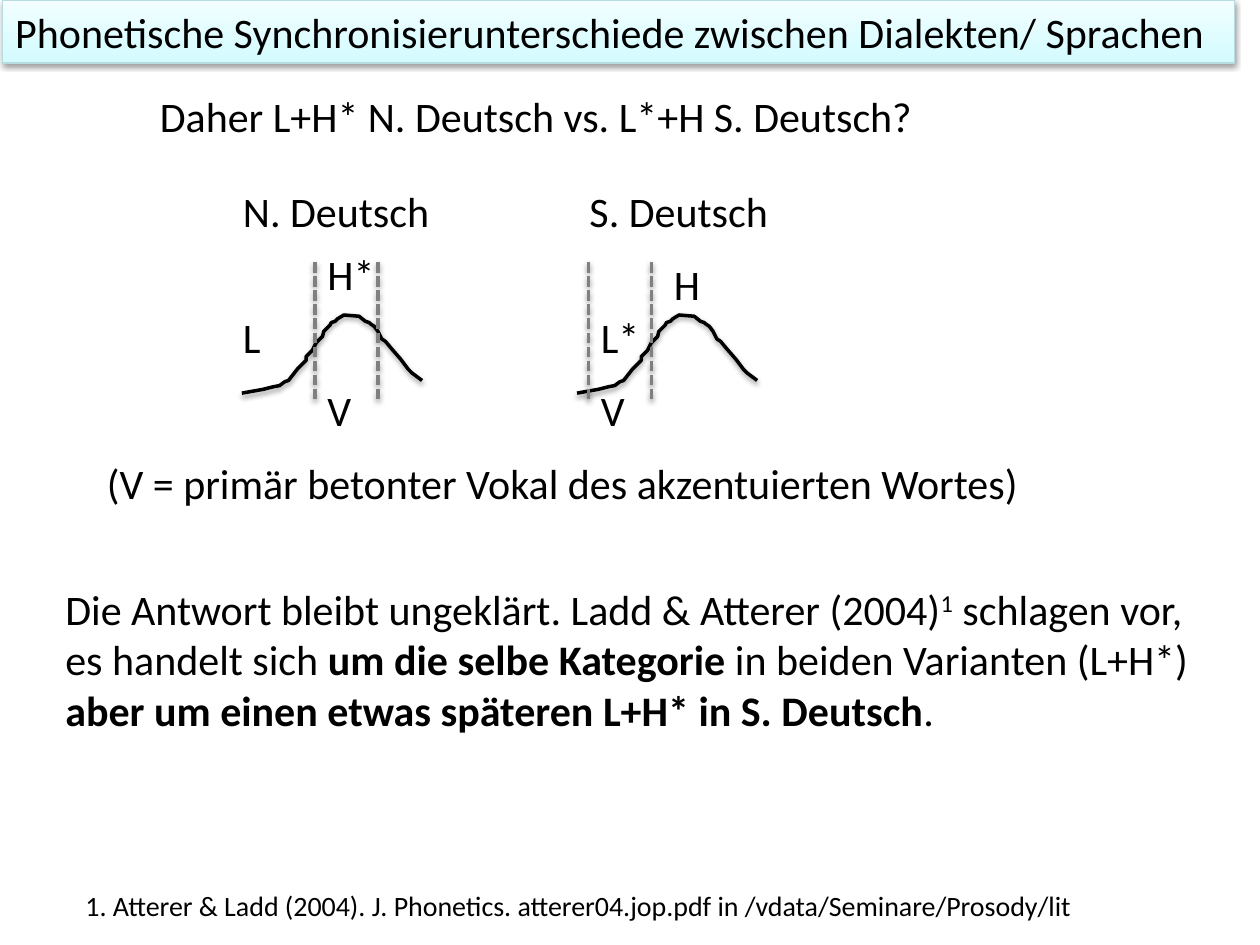
from dataclasses import dataclass

from lxml.etree import SubElement
from pptx import Presentation
from pptx.dml.color import RGBColor
from pptx.enum.dml import MSO_LINE_DASH_STYLE as Dash
from pptx.enum.shapes import MSO_CONNECTOR_TYPE as Connector
from pptx.enum.text import MSO_ANCHOR as Anchor
from pptx.enum.text import MSO_AUTO_SIZE as AutoSize
from pptx.enum.text import PP_ALIGN as Align
from pptx.oxml.ns import qn
from pptx.util import Inches, Pt

COLORS = {
    "text": "000000",
    "curve": "000000",
    "boundary": "808080",
    "banner_bottom": "D3FBFF",
    "banner_top": "F2FEFF",
    "banner_line": "B6DCDF",
    "shadow": "000000",
}
FONT = "Calibri"
SHADOW = {"blurRad": Pt(3.1), "dist": Pt(1.6), "dir": 90 * 60000, "rotWithShape": 0}
SHADOW_ALPHA = 38000

CURVE_TOP = 2.5
CURVE_POINTS = [
    (0, 62), (17, 59), (25, 57), (30, 56), (34, 53), (37, 52), (44, 43),
    (51, 36), (51, 33), (56, 28), (59, 22), (62, 19), (64, 17), (65, 13),
    (70, 8), (71, 6), (74, 5), (76, 3), (81, 0), (93, 1), (98, 5), (101, 6),
    (102, 7), (105, 9), (108, 13), (111, 19), (114, 21), (119, 27),
    (126, 35), (132, 43), (135, 46), (139, 49), (143, 52),
]
BOUNDARY_TOP = 2.08
BOUNDARY_BOTTOM = 3.17
VOWEL_WIDTH = 0.5


@dataclass(frozen=True)
class Run:
    text: str
    bold: bool = False
    superscript: bool = False


@dataclass(frozen=True)
class Label:
    left: float
    top: float
    width: float
    runs: tuple[Run, ...]
    size: int = 24
    height: float = 0.51


@dataclass(frozen=True)
class Contour:
    curve_left: float
    vowel_left: float


CONTOURS = [Contour(1.92, 2.5), Contour(4.58, 4.67)]

ANSWER = (
    Run("Die Antwort bleibt ungeklärt. Ladd & Atterer (2004)"),
    Run("1", superscript=True),
    Run(" schlagen vor, es handelt sich "),
    Run("um die selbe Kategorie ", bold=True),
    Run("in beiden Varianten (L+H*) "),
    Run("aber um einen etwas späteren L+H* in S. Deutsch", bold=True),
    Run("."),
)
CITATION = "1. Atterer & Ladd (2004). J. Phonetics. atterer04.jop.pdf in /vdata/Seminare/Prosody/lit"

LABELS = [
    Label(1.17, 0.67, 7.25, (Run("Daher L+H* N. Deutsch vs. L*+H S. Deutsch?"),)),
    Label(1.83, 1.42, 2.08, (Run("N. Deutsch"),)),
    Label(4.58, 1.42, 2.08, (Run("S. Deutsch"),)),
    Label(1.83, 2.42, 0.58, (Run("L"),)),
    Label(2.5, 1.92, 0.58, (Run("H*"),)),
    Label(4.67, 2.42, 0.58, (Run("L*"),)),
    Label(5.25, 2, 0.58, (Run("H"),)),
    Label(2.5, 3, 0.58, (Run("V"),)),
    Label(4.67, 3, 0.58, (Run("V"),)),
    Label(0.75, 3.58, 7.83, (Run("(V = primär betonter Vokal des akzentuierten Wortes)"),)),
    Label(0.42, 4.58, 9.25, ANSWER, height=1.31),
    Label(0.58, 7, 8.67, (Run(CITATION),), size=16, height=0.37),
]


def color(name: str) -> RGBColor:
    return RGBColor.from_string(COLORS[name])


def apply_format(target, values: dict) -> None:
    for name, value in values.items():
        setattr(target, name, value)


def add_shadow(shape) -> None:
    effects = SubElement(shape._element.spPr, qn("a:effectLst"))
    attributes = {name: str(value) for name, value in SHADOW.items()}
    outer = SubElement(effects, qn("a:outerShdw"), attributes)
    shade = SubElement(outer, qn("a:srgbClr"), val=COLORS["shadow"])
    SubElement(shade, qn("a:alpha"), val=str(SHADOW_ALPHA))


def style_line(line, color_name: str, width: float) -> None:
    line.color.rgb = color(color_name)
    line.width = Pt(width)


def write_runs(paragraph, runs: tuple[Run, ...], size: int) -> None:
    for item in runs:
        run = paragraph.add_run()
        run.text = item.text
        apply_format(run.font, {"name": FONT, "size": Pt(size), "bold": item.bold})
        run.font.color.rgb = color("text")
        if item.superscript:
            run._r.get_or_add_rPr().set("baseline", "30000")


def add_label(slide, label: Label) -> None:
    box = slide.shapes.add_textbox(
        Inches(label.left), Inches(label.top), Inches(label.width), Inches(label.height)
    )
    apply_format(box.text_frame, {"word_wrap": True, "auto_size": AutoSize.SHAPE_TO_FIT_TEXT})
    write_runs(box.text_frame.paragraphs[0], label.runs, label.size)


def add_curve(slide, left: float) -> None:
    builder = slide.shapes.build_freeform(*CURVE_POINTS[0], scale=Inches(0.01))
    builder.add_line_segments(CURVE_POINTS[1:], close=False)
    curve = builder.convert_to_shape(Inches(left), Inches(CURVE_TOP))
    curve.fill.background()
    style_line(curve.line, "curve", 2)
    add_shadow(curve)


def add_boundary(slide, left: float) -> None:
    boundary = slide.shapes.add_connector(
        Connector.STRAIGHT,
        Inches(left), Inches(BOUNDARY_TOP), Inches(left), Inches(BOUNDARY_BOTTOM),
    )
    style_line(boundary.line, "boundary", 2)
    boundary.line.dash_style = Dash.SQUARE_DOT
    add_shadow(boundary)


def format_title(title, text: str) -> None:
    apply_format(title, {
        "left": Inches(0.02), "top": Inches(0),
        "width": Inches(9.78), "height": Inches(0.5),
    })
    title.fill.gradient()
    title.fill.gradient_angle = 90
    stops = title.fill.gradient_stops
    for stop, position, name in zip(stops, (0, 1), ("banner_bottom", "banner_top")):
        stop.color.rgb = color(name)
        stop.position = position
    style_line(title.line, "banner_line", 0.75)
    add_shadow(title)
    apply_format(title.text_frame, {
        "word_wrap": True, "auto_size": AutoSize.NONE, "vertical_anchor": Anchor.TOP,
    })
    paragraph = title.text_frame.paragraphs[0]
    paragraph.alignment = Align.LEFT
    write_runs(paragraph, (Run(text),), 24)


def main() -> None:
    presentation = Presentation()
    apply_format(presentation, {"slide_width": Inches(10), "slide_height": Inches(7.5)})
    slide = presentation.slides.add_slide(presentation.slide_layouts.get_by_name("Title Only"))
    format_title(
        slide.shapes.title,
        "Phonetische Synchronisierunterschiede zwischen Dialekten/ Sprachen",
    )
    for contour in CONTOURS:
        add_curve(slide, contour.curve_left)
        for offset in (0, VOWEL_WIDTH):
            add_boundary(slide, contour.vowel_left + offset)
    for label in LABELS:
        add_label(slide, label)
    presentation.save("out.pptx")


if __name__ == "__main__":
    main()
